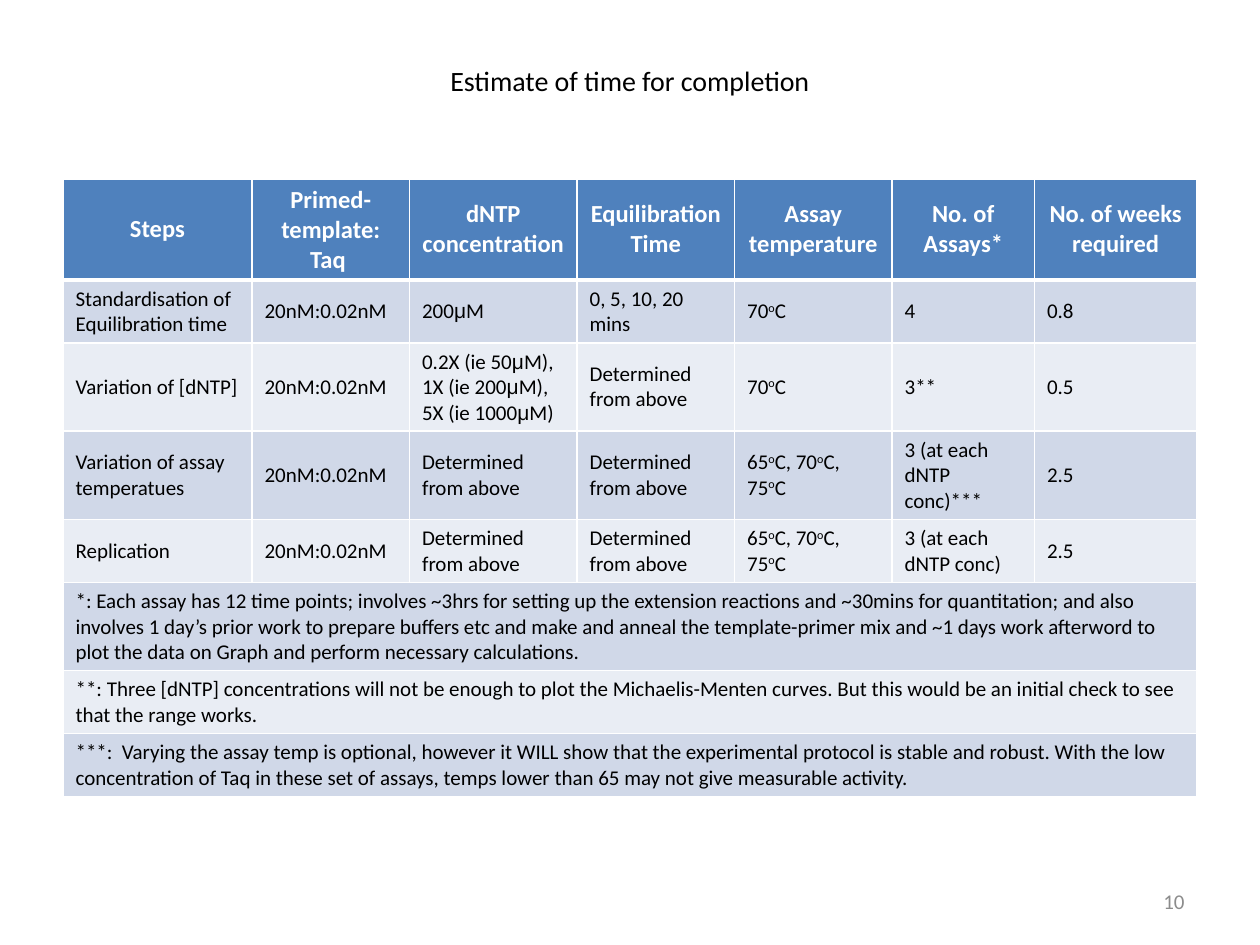
import pptx
import pptx.util
import pptx.dml.color
import pptx.enum.text
import pptx.oxml

Inches, Pt = pptx.util.Inches, pptx.util.Pt
ALIGN = pptx.enum.text.PP_ALIGN
MIDDLE = pptx.enum.text.MSO_ANCHOR.MIDDLE

TITLE = "Estimate of time for completion"
PAGE = "10"
HEADERS = ["Steps", "Primed-template: Taq ", "dNTP concentration", "Equilibration Time",
           "Assay temperature", "No. of Assays*", "No. of weeks required"]
RATIO = "20nM:0.02nM"
ABOVE = "Determined from above"
TEMPS = "65|o|C, 70|o|C, 75|o|C"
STEPS = [
    ["Standardisation of Equilibration time", RATIO, "200|μ|M", "0, 5, 10, 20 mins",
     "70|o|C", "4", "0.8"],
    ["Variation of [dNTP]", RATIO, "0.2X (ie 50|μ|M),\n1X (ie 200|μ|M),\n5X (ie 1000|μ|M)", ABOVE,
     "70|o|C", "3**", "0.5"],
    ["Variation of assay temperatues", RATIO, ABOVE, ABOVE, TEMPS, "3 (at each dNTP conc)***", "2.5"],
    ["Replication", RATIO, ABOVE, ABOVE, TEMPS, "3 (at each dNTP conc)", "2.5"],
]
NOTES = [
    "*: Each assay has 12 time points; involves ~3hrs for setting up the extension reactions and "
    "~30mins for quantitation; and also involves 1 day’s prior work to prepare buffers etc and make "
    "and anneal the template-primer mix and ~1 days work afterword to plot the data on Graph and "
    "perform necessary calculations.",
    "**: Three [dNTP] concentrations will not be enough to plot the Michaelis-Menten curves. But this "
    "would be an initial check to see that the range works.",
    "***:  Varying the assay temp is optional, however it WILL show that the experimental protocol is "
    "stable and robust. With the low concentration of Taq in these set of assays, temps lower than 65 "
    "may not give measurable activity.",
]
COL_WIDTHS = [1.5, 1.25, 1.33, 1.25, 1.25, 1.13, 1.29]
ROW_HEIGHTS = [0.79, 0.5, 0.7, 0.7, 0.5, 0.7, 0.5, 0.5]
HEADER_FILL, BANDS = "4F81BD", ["D0D8E8", "E9EDF4"]
MARGIN, TABLE_TOP = 0.5, 1.42


def rgb(value):
    return pptx.dml.color.RGBColor.from_string(value)


def write(tf, text, size, color, align, bold=False):
    tf.word_wrap = True
    tf.vertical_anchor = MIDDLE
    for i, line in enumerate(text.split("\n")):
        p = tf.paragraphs[0] if i == 0 else tf.add_paragraph()
        p.alignment = align
        for part in line.split("|"):
            r = p.add_run()
            r.text = part
            r.font.name = "Arial" if part == "μ" else "Calibri"
            r.font.size, r.font.bold = Pt(size), bold
            r.font.color.rgb = rgb(color)
            if part == "o":
                r.font._element.set("baseline", "30000")


def add_text(slide, box, text, size, color, align):
    sp = slide.shapes.add_textbox(*(Inches(v) for v in box))
    write(sp.text_frame, text, size, color, align)


def set_borders(cell, top, bottom):
    tcPr = cell._tc.get_or_add_tcPr()
    for i, (side, width) in enumerate([("L", 1), ("R", 1), ("T", top), ("B", bottom)]):
        tcPr.insert(i, pptx.oxml.parse_xml(
            f'<a:ln{side} xmlns:a="http://schemas.openxmlformats.org/drawingml/2006/main" '
            f'w="{Pt(width)}"><a:solidFill><a:srgbClr val="FFFFFF"/></a:solidFill></a:ln{side}>'))


def add_schedule(slide):
    rows = [HEADERS] + STEPS + [[note] for note in NOTES]
    table = slide.shapes.add_table(
        len(rows), len(HEADERS), Inches(MARGIN), Inches(TABLE_TOP),
        Inches(sum(COL_WIDTHS)), Inches(sum(ROW_HEIGHTS))).table
    for column, width in zip(table.columns, COL_WIDTHS):
        column.width = Inches(width)
    for r, (values, height) in enumerate(zip(rows, ROW_HEIGHTS)):
        table.rows[r].height = Inches(height)
        if len(values) == 1:
            table.cell(r, 0).merge(table.cell(r, len(HEADERS) - 1))
        for c in range(len(HEADERS)):
            cell = table.cell(r, c)
            cell.fill.solid()
            cell.fill.fore_color.rgb = rgb(BANDS[(r - 1) % 2] if r else HEADER_FILL)
            set_borders(cell, 3 if r == 1 else 1, 1 if r else 3)
            cell.vertical_anchor = MIDDLE
            if c < len(values):
                if r:
                    write(cell.text_frame, values[c], 12, "000000", ALIGN.LEFT)
                else:
                    write(cell.text_frame, values[c], 14, "FFFFFF", ALIGN.CENTER, True)


def main():
    prs = pptx.Presentation()
    prs.slide_width, prs.slide_height = Inches(10), Inches(7.5)
    slide = prs.slides.add_slide(prs.slide_layouts[6])
    add_text(slide, (MARGIN, 0.01, 9, 1.25), TITLE, 16, "000000", ALIGN.CENTER)
    add_schedule(slide)
    add_text(slide, (7.17, 6.95, 2.33, 0.4), PAGE, 12, "8C8C8C", ALIGN.RIGHT)
    prs.save("out.pptx")


if __name__ == "__main__":
    main()
